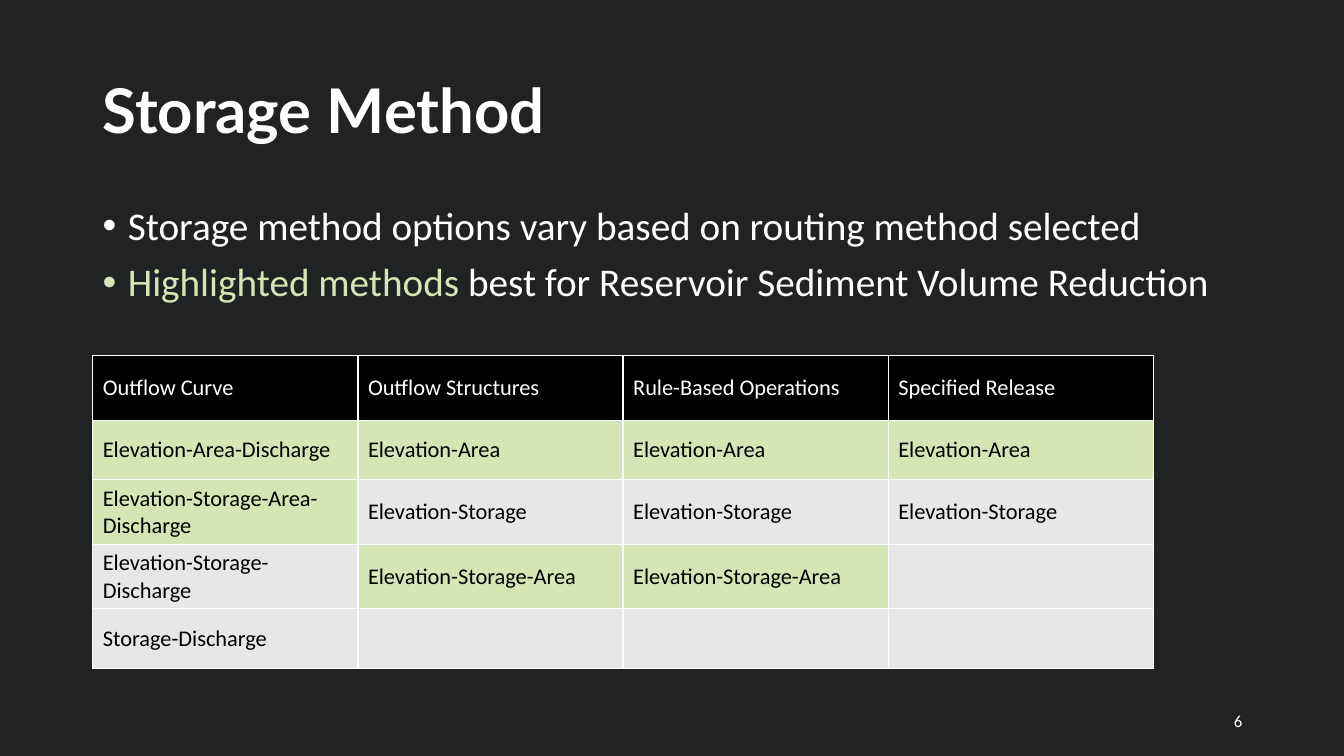
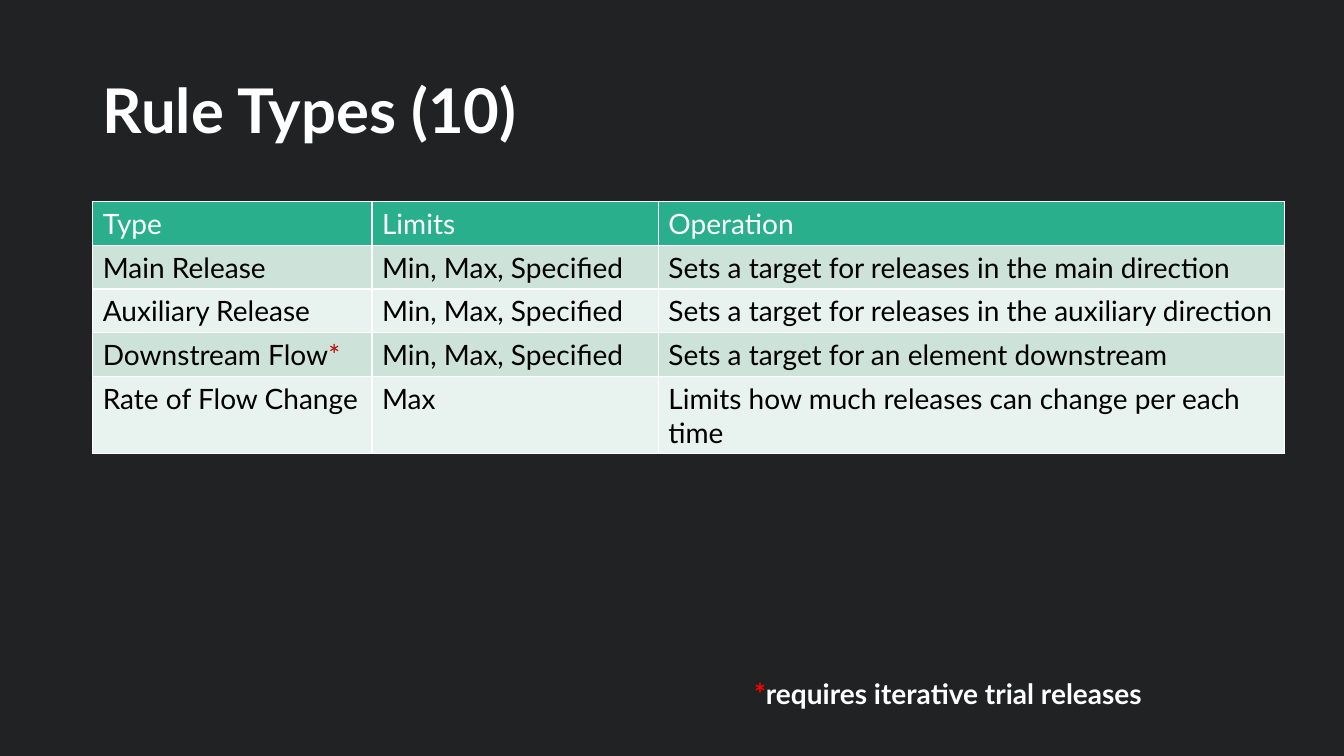
from pptx import Presentation
from pptx.dml.color import RGBColor
from pptx.enum import text as t
from pptx.oxml import parse_xml
from pptx.oxml.ns import nsdecls
from pptx.util import Inches, Pt

DARK = RGBColor(0x20, 0x22, 0x23)
WHITE = RGBColor(0xFF, 0xFF, 0xFF)
BLACK = RGBColor(0x00, 0x00, 0x00)
LIME = RGBColor(0xD5, 0xE5, 0xB6)
GREY = RGBColor(0xE7, 0xE7, 0xE7)
TEAL = RGBColor(0x29, 0xAF, 0x8C)
MINT = RGBColor(0xCD, 0xE3, 0xDA)
PALE = RGBColor(0xE8, 0xF2, 0xEE)
CRIMSON = RGBColor(0xC0, 0x00, 0x00)
RED = RGBColor(0xFF, 0x00, 0x00)

LEFT = 0.92
WIDTH = 11.5


def write(frame, *lines, font="Calibri", size=16, color=WHITE, bold=False,
          align=None, space=None, before=None, bullet=None):
    for i, line in enumerate(lines):
        para = frame.add_paragraph() if i else frame.paragraphs[0]
        para.alignment = align
        para.line_spacing = space
        para.space_before = before
        if bullet:
            props = para._p.get_or_add_pPr()
            props.set("marL", str(Inches(0.25)))
            props.set("indent", str(Inches(-0.25)))
            props.append(parse_xml(f'<a:buFont {nsdecls("a")} typeface="Arial"/>'))
            props.append(parse_xml(f'<a:buChar {nsdecls("a")} char="{bullet}"/>'))
        for part in [line] if isinstance(line, str) else line:
            words, tint = (part, color) if isinstance(part, str) else part
            run = para.add_run()
            run.text = words
            run.font.name = font
            run.font.size = Pt(size)
            run.font.bold = bold
            run.font.color.rgb = tint


def edge(cell, color=WHITE, width=1):
    props = cell._tc.get_or_add_tcPr()
    for side in "LRTB":
        props.append(parse_xml(
            f'<a:ln{side} {nsdecls("a")} w="{Pt(width)}"><a:solidFill>'
            f'<a:srgbClr val="{color}"/></a:solidFill></a:ln{side}>'))


class Deck:
    def __init__(self):
        self.prs = Presentation()
        self.prs.slide_width = Inches(13.33)
        self.prs.slide_height = Inches(7.5)
        self.slide = None

    def page(self, title):
        self.slide = self.prs.slides.add_slide(self.prs.slide_layouts[6])
        fill = self.slide.background.fill
        fill.solid()
        fill.fore_color.rgb = DARK
        self.label(LEFT, 0.4, WIDTH, 1.45, title, font="Lato", size=44,
                   bold=True, space=0.9, anchor=t.MSO_ANCHOR.MIDDLE)

    def label(self, x, y, w, h, *lines, anchor=t.MSO_ANCHOR.TOP, **style):
        box = self.slide.shapes.add_textbox(Inches(x), Inches(y), Inches(w), Inches(h))
        box.text_frame.word_wrap = True
        box.text_frame.vertical_anchor = anchor
        write(box.text_frame, *lines, **style)

    def table(self, y, cols, rows, data, shade, anchor=t.MSO_ANCHOR.TOP, **style):
        grid = self.slide.shapes.add_table(
            len(rows), len(cols), Inches(LEFT), Inches(y),
            Inches(sum(cols)), Inches(sum(rows))).table
        for col, wide in zip(grid.columns, cols):
            col.width = Inches(wide)
        for row, high in zip(grid.rows, rows):
            row.height = Inches(high)
        for r, line in enumerate(data):
            for c, words in enumerate(line):
                cell = grid.cell(r, c)
                cell.vertical_anchor = anchor
                edge(cell)
                cell.fill.solid()
                cell.fill.fore_color.rgb = shade(r, words)
                if words:
                    write(cell.text_frame, words, color=BLACK if r else WHITE, **style)


def method_shade(row, words):
    if row == 0:
        return BLACK
    return LIME if "Area" in words else GREY


def rule_shade(row, words):
    if row == 0:
        return TEAL
    return MINT if row % 2 else PALE


METHODS = [
    ["Outflow Curve", "Outflow Structures", "Rule-Based Operations", "Specified Release"],
    ["Elevation-Area-Discharge"] + ["Elevation-Area"] * 3,
    ["Elevation-Storage-Area-Discharge"] + ["Elevation-Storage"] * 3,
    ["Elevation-Storage-Discharge"] + ["Elevation-Storage-Area"] * 2 + [""],
    ["Storage-Discharge", "", "", ""],
]

LIMITS = "Min, Max, Specified"
RULES = [
    ["Type", "Limits", "Operation"],
    ["Main Release", LIMITS, "Sets a target for releases in the main direction"],
    ["Auxiliary Release", LIMITS, "Sets a target for releases in the auxiliary direction"],
    [["Downstream Flow", ("*", CRIMSON)], LIMITS, "Sets a target for an element downstream"],
    ["Rate of Flow Change", "Max", "Limits how much releases can change per each time"],
]


def main():
    deck = Deck()

    deck.page("Storage Method")
    deck.label(LEFT, 2, WIDTH, 1.38,
               "Storage method options vary based on routing method selected",
               [("Highlighted methods", LIME),
                " best for Reservoir Sediment Volume Reduction"],
               size=28, space=0.9, before=Pt(10), bullet="•")
    deck.table(3.53, [2.63] * 4, [0.64, 0.59, 0.64, 0.64, 0.59], METHODS,
               method_shade, anchor=t.MSO_ANCHOR.MIDDLE)
    deck.label(9.42, 6.95, 3, 0.4, "6", size=12, align=t.PP_ALIGN.RIGHT,
               anchor=t.MSO_ANCHOR.MIDDLE)

    deck.page("Rule Types (10)")
    deck.table(2, [2.77, 2.84, 6.21], [0.41] * 5, RULES, rule_shade,
               font="Lato", size=20)
    deck.label(7.38, 6.66, 4.88, 0.44,
               [("*", RED), "requires iterative trial releases"],
               font="Lato", size=20, bold=True)

    deck.prs.save("out.pptx")


if __name__ == "__main__":
    main()
